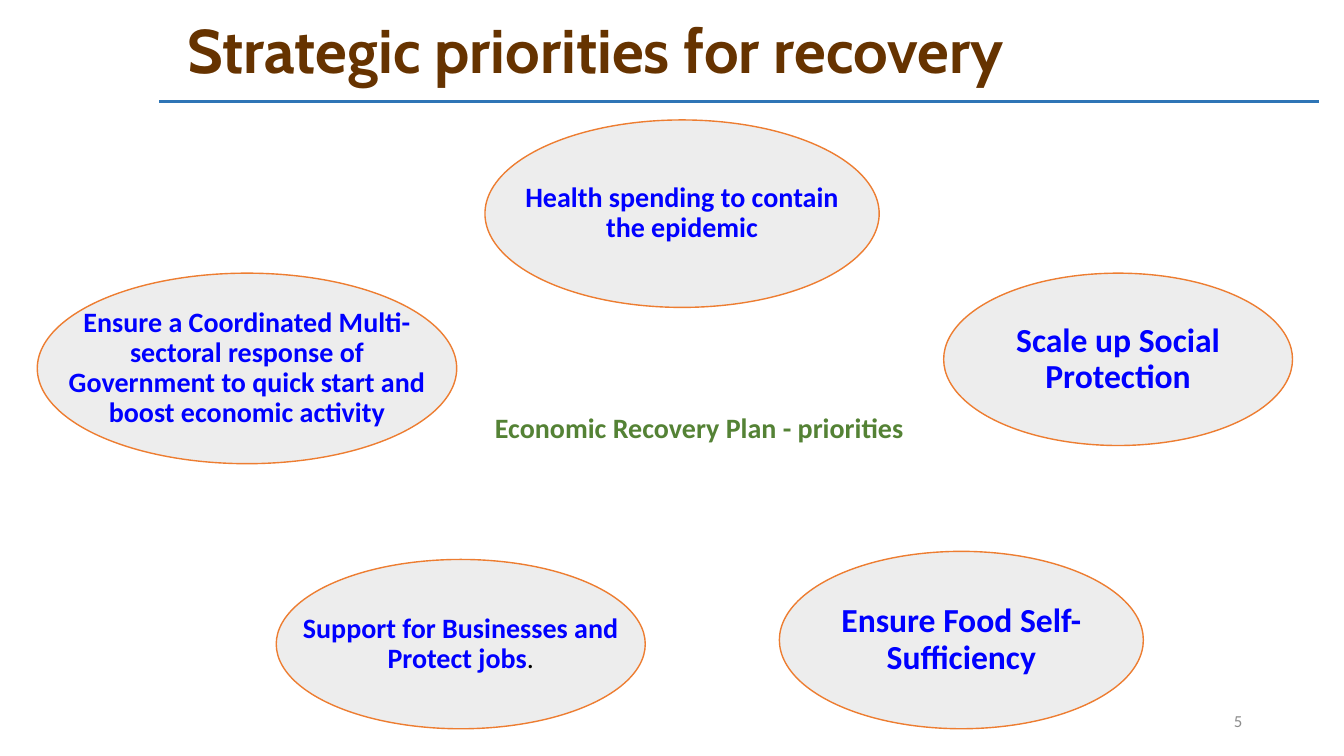
from lxml.etree import SubElement
from pptx import Presentation
from pptx.dml.color import RGBColor
from pptx.enum.shapes import MSO_CONNECTOR, MSO_SHAPE
from pptx.enum.text import MSO_ANCHOR, PP_ALIGN
from pptx.oxml.ns import qn
from pptx.util import Inches, Pt

COLORS = {
    "rule": "2E75B6",
    "title": "663300",
    "number": "8C8C8C",
    "oval": "EDEDED",
    "outline": "ED7D31",
    "priority": "0000FF",
    "plan": "548235",
    "stop": "000000",
}
OVAL_TEXT_INSET = 0.1464
PADDING = 0.25


def color(name):
    return RGBColor.from_string(COLORS[name])


def style_text(para, size, name, bold=True, font="Calibri"):
    para.font.name = font
    para.font.size = Pt(size)
    para.font.bold = bold
    para.font.color.rgb = color(name)


deck = Presentation()
deck.slide_width = Inches(13.33)
deck.slide_height = Inches(7.5)
page = deck.slides.add_slide(deck.slide_layouts[6])

rule = page.shapes.add_connector(
    MSO_CONNECTOR.STRAIGHT, Inches(1.58), Inches(1.01), Inches(13.08), Inches(1.01)
)
rule.line.color.rgb = color("rule")
rule.line.width = Pt(2.25)
SubElement(rule._element.spPr, qn("a:effectLst"))

labels = [
    ("Strategic priorities for recovery", 1.76, 0.07, 10.97, 0.92,
     44, "title", True, "Cabin", PP_ALIGN.LEFT, MSO_ANCHOR.MIDDLE),
    ("5", 9.42, 6.95, 3, 0.4,
     12, "number", False, "Calibri", PP_ALIGN.RIGHT, MSO_ANCHOR.MIDDLE),
    ("Economic Recovery Plan - priorities", 4.81, 4.02, 4.26, 0.44,
     20, "plan", True, "Calibri", PP_ALIGN.LEFT, MSO_ANCHOR.TOP),
]
for text, left, top, width, height, size, name, bold, font, align, anchor in labels:
    box = page.shapes.add_textbox(Inches(left), Inches(top), Inches(width), Inches(height))
    frame = box.text_frame
    frame.word_wrap = True
    frame.vertical_anchor = anchor
    para = frame.paragraphs[0]
    para.text = text
    para.alignment = align
    para.line_spacing = 0.9 if name == "title" else 1.0
    style_text(para, size, name, bold, font)

priorities = [
    ("Health spending to contain the epidemic", "", 4.81, 1.19, 3.91, 1.86, 20),
    ("Ensure Food Self-Sufficiency", "", 7.73, 5.47, 3.61, 1.76, 24),
    ("Ensure a Coordinated Multi-sectoral response of Government to quick start "
     "and boost economic activity", "", 0.37, 2.71, 4.16, 1.89, 20),
    ("Support for Businesses and Protect jobs", ".", 2.74, 5.55, 3.66, 1.68, 20),
    ("Scale up Social Protection", "", 9.36, 2.71, 3.46, 1.71, 24),
]
for text, stop, left, top, width, height, size in priorities:
    oval = page.shapes.add_shape(
        MSO_SHAPE.OVAL, Inches(left), Inches(top), Inches(width), Inches(height)
    )
    oval.shadow.inherit = False
    oval.fill.solid()
    oval.fill.fore_color.rgb = color("oval")
    oval.line.color.rgb = color("outline")
    oval.line.width = Pt(1)
    frame = oval.text_frame
    frame.word_wrap = True
    frame.vertical_anchor = MSO_ANCHOR.MIDDLE
    frame.margin_left = frame.margin_right = Inches(PADDING - OVAL_TEXT_INSET * width)
    frame.margin_top = frame.margin_bottom = Inches(PADDING - OVAL_TEXT_INSET * height)
    para = frame.paragraphs[0]
    para.text = text
    para.alignment = PP_ALIGN.CENTER
    para.line_spacing = 0.9
    style_text(para, size, "priority")
    if stop:
        span = para.add_run()
        span.text = stop
        span.font.bold = False
        span.font.color.rgb = color("stop")

deck.save("out.pptx")
